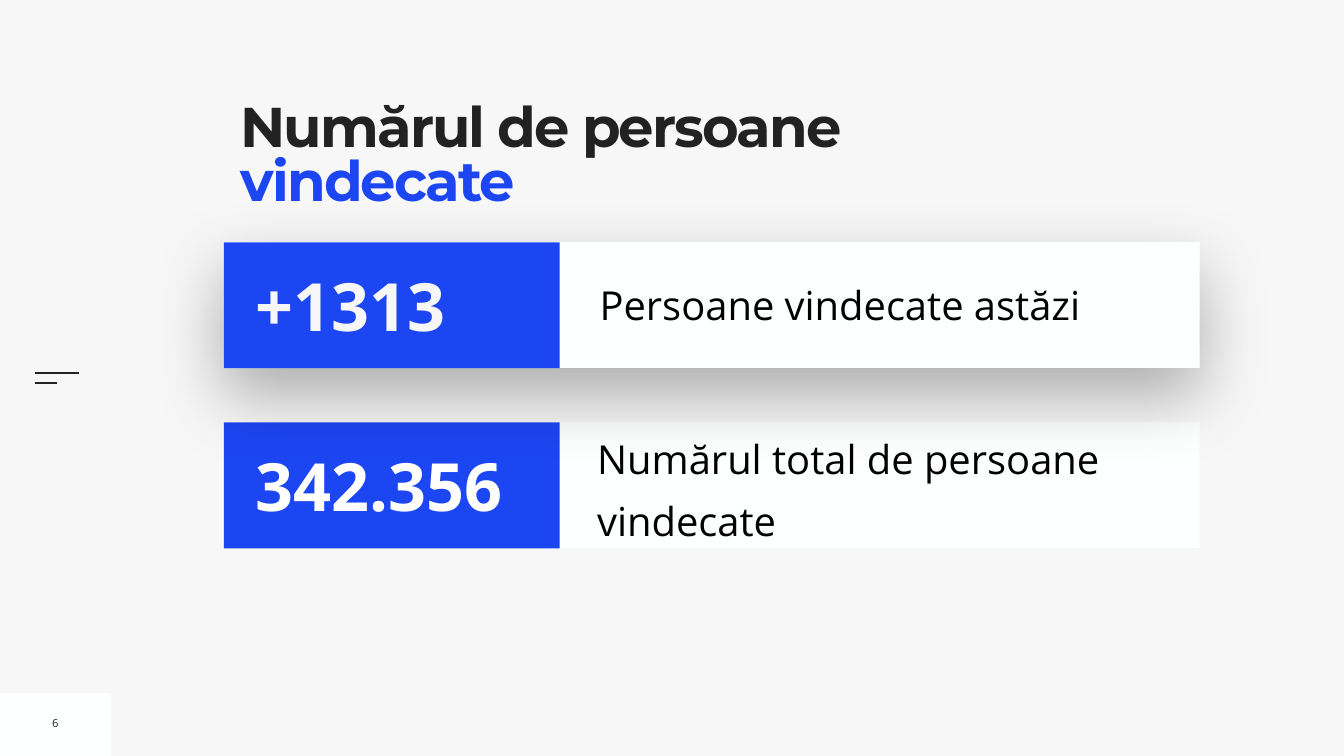
"""Build the slide on the number of recovered people."""
from lxml.etree import SubElement
from pptx import Presentation
from pptx.dml.color import RGBColor
from pptx.enum.shapes import MSO_CONNECTOR as Connector, MSO_SHAPE as Shape
from pptx.enum.text import MSO_ANCHOR as Anchor, MSO_AUTO_SIZE as AutoSize, PP_ALIGN as Align
from pptx.oxml.ns import qn
from pptx.util import Cm, Pt

TITLE = [("Numărul de persoane ", "ink"), ("vindecate", "accent")]
PAGE = "6"
ROWS = [
    {"top": 21.27, "figure": "342.356", "figure_color": "white", "raised": False,
     "label": "Numărul total de persoane vindecate", "label_box": (18.81, 0.05, 30.35, 5.99),
     "inset": 0, "spacing": {"line_spacing": 1.3, "space_before": Pt(20)}},
    {"top": 12.19, "figure": "+1313", "figure_color": "ground", "raised": True,
     "label": "Persoane vindecate astăzi", "label_box": (18.68, 1.7, 29.87, 2.95),
     "inset": 0.25, "spacing": {}},
]
THEME = {
    "ground": "F7F7F7", "panel": "FEFFFF", "accent": "1D46F3", "ink": "222222",
    "black": "000000", "white": "FFFFFF",
    "title_font": "Montserrat", "body_font": "Open Sans",
    "title_size": 80, "figure_size": 95, "label_size": 57, "page_size": 16,
}
SLIDE_WIDTH, SLIDE_HEIGHT = 67.74, 38.1
ROW_LEFT, ROW_WIDTH, ROW_HEIGHT, FIGURE_WIDTH = 11.29, 49.17, 6.35, 16.92
FIGURE_BOX = (1.35, 0.9, 15.32, 4.57)
MENU_LEFT, MENU_TOP, MENU_GAP, MENU_LENGTHS = 1.75, 18.82, 0.46, (2.24, 1.12)


def color(name):
    return RGBColor.from_string(THEME[name])


def add_panel(shapes, box, fill):
    panel = shapes.add_shape(Shape.RECTANGLE, *map(Cm, box))
    panel.shadow.inherit = False
    panel.fill.solid()
    panel.fill.fore_color.rgb = color(fill)
    panel.line.fill.background()
    return panel


def cast_shadow(panel):
    effects = panel._element.spPr.find(qn("a:effectLst"))
    shadow = SubElement(effects, qn("a:outerShdw"), blurRad=str(Pt(100)),
                        dist=str(Pt(40)), dir="5400000", rotWithShape="0")
    black = SubElement(shadow, qn("a:srgbClr"), val=THEME["black"])
    SubElement(black, qn("a:alpha"), val="30000")


def add_text(shapes, box, runs, role, inset=0.25, frame_format=None,
             paragraph_format=None, bold=False, font="body_font"):
    text_box = shapes.add_textbox(*map(Cm, box))
    frame = text_box.text_frame
    settings = {"word_wrap": True, "vertical_anchor": Anchor.MIDDLE,
                "auto_size": AutoSize.SHAPE_TO_FIT_TEXT}
    settings.update({f"margin_{side}": Cm(inset) for side in ("left", "top", "right", "bottom")})
    settings.update(frame_format or {})
    for key, value in settings.items():
        setattr(frame, key, value)
    paragraph = frame.paragraphs[0]
    for key, value in (paragraph_format or {}).items():
        setattr(paragraph, key, value)
    for words, ink in runs:
        run = paragraph.add_run()
        run.text = words
        font_format = {"name": THEME[font], "size": Pt(THEME[f"{role}_size"]), "bold": bold}
        for key, value in font_format.items():
            setattr(run.font, key, value)
        run.font.color.rgb = color(ink)
    return text_box


def add_menu_mark(shapes):
    for index, length in enumerate(MENU_LENGTHS):
        y = MENU_TOP + index * MENU_GAP
        bar = shapes.add_connector(Connector.STRAIGHT, Cm(MENU_LEFT), Cm(y),
                                   Cm(MENU_LEFT + length), Cm(y))
        bar.line.color.rgb = color("ink")
        bar.line.width = Pt(3)
        SubElement(bar._element.spPr, qn("a:effectLst"))


def add_title(shapes):
    title = add_text(shapes, (12.12, 5.26, 33.05, 6.93), TITLE, "title", 0,
                     {"vertical_anchor": Anchor.TOP, "auto_size": AutoSize.NONE},
                     {"line_spacing": 0.8}, True, "title_font")
    title.fill.solid()
    title.fill.fore_color.rgb = color("ground")
    for run in title.text_frame.paragraphs[0].runs:
        run.font._element.set("spc", "-270")


def add_row(slide_shapes, row):
    shapes = slide_shapes.add_group_shape().shapes

    def place(box):
        return ROW_LEFT + box[0], row["top"] + box[1], *box[2:]

    card = add_panel(shapes, place((0, 0, ROW_WIDTH, ROW_HEIGHT)), "panel")
    if row["raised"]:
        cast_shadow(card)
    add_text(shapes, place(row["label_box"]), [(row["label"], "black")], "label",
             row["inset"], paragraph_format=row["spacing"])
    add_panel(shapes, place((0, 0.02, FIGURE_WIDTH, ROW_HEIGHT)), "accent")
    add_text(shapes, place(FIGURE_BOX), [(row["figure"], row["figure_color"])],
             "figure", bold=True)


def main():
    deck = Presentation()
    deck.slide_width, deck.slide_height = Cm(SLIDE_WIDTH), Cm(SLIDE_HEIGHT)
    slide = deck.slides.add_slide(deck.slide_layouts[6])
    slide.background.fill.solid()
    slide.background.fill.fore_color.rgb = color("ground")
    shapes = slide.shapes
    add_panel(shapes, (0, 34.95, 5.59, 3.15), "panel")
    add_menu_mark(shapes)
    add_title(shapes)
    add_text(shapes, (2.36, 35.79, 0.86, 1.3), [(PAGE, "ink")], "page",
             frame_format={"word_wrap": False}, paragraph_format={"alignment": Align.CENTER})
    for row in ROWS:
        add_row(shapes, row)
    deck.save("out.pptx")


if __name__ == "__main__":
    main()
